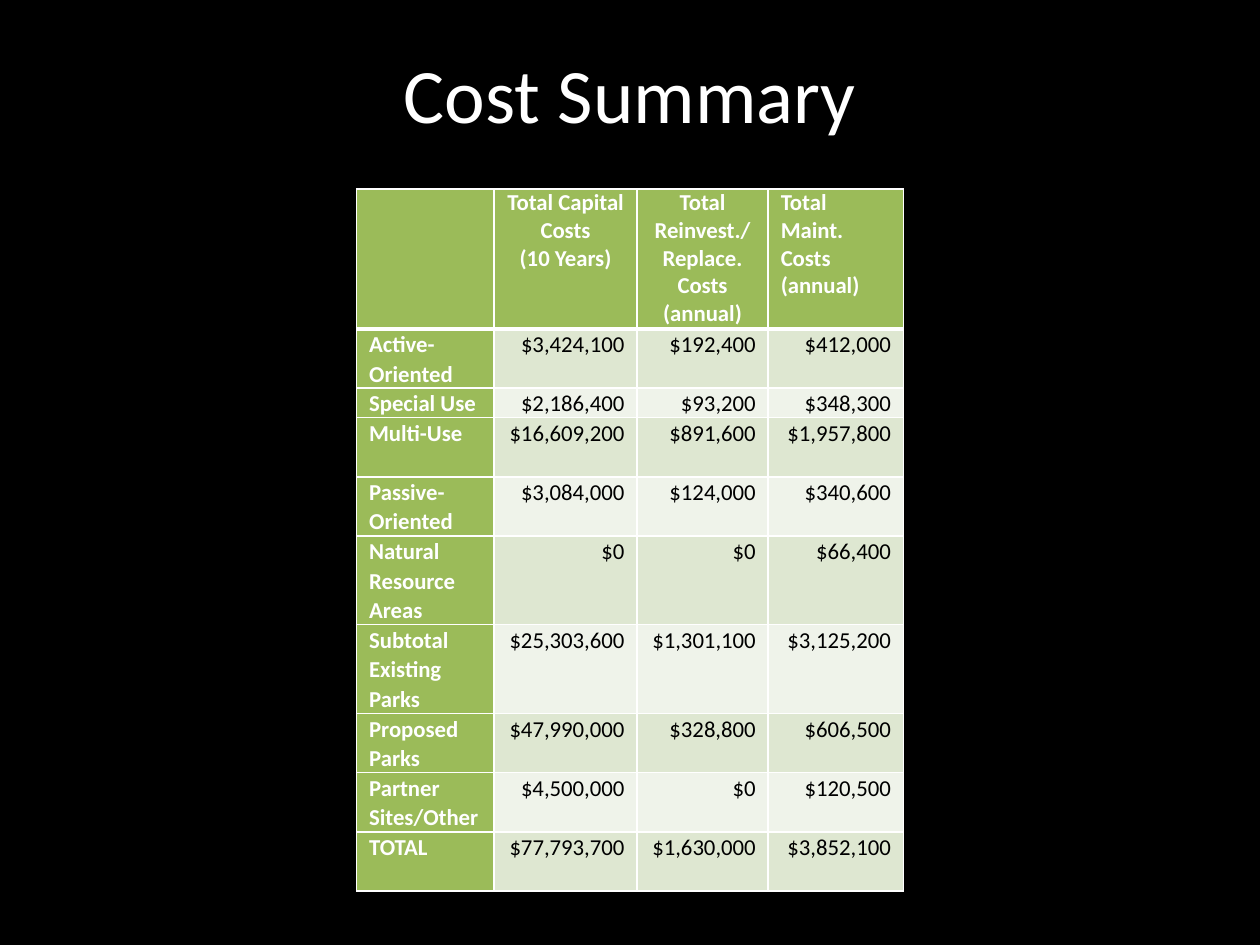
from lxml import etree
from pptx import Presentation, util as u
from pptx.dml.color import RGBColor
from pptx.enum import text
from pptx.oxml.ns import qn

COLORS = {"black": "000000", "white": "FFFFFF", "green": "9BBB59",
          "dark_band": "DEE7D1", "light_band": "EFF3EA"}
LEFT, CENTER, RIGHT = text.PP_ALIGN.LEFT, text.PP_ALIGN.CENTER, text.PP_ALIGN.RIGHT

COL_WIDTHS = [1.09, 1.13, 1.04, 1.07]
LINE_HEIGHT = 0.235
HEADER_HEIGHT = 1.11
HEADERS = [
    ("", LEFT),
    ("Total Capital Costs\n(10 Years)", CENTER),
    ("Total Reinvest./\nReplace.\nCosts (annual)", CENTER),
    ("Total Maint. Costs (annual)", LEFT),
]
# Number of text lines the row holds, then its cells
ROWS = [
    (2, "Active-Oriented", "$3,424,100", "$192,400", "$412,000"),
    (1, "Special Use", "$2,186,400", "$93,200", "$348,300"),
    (2, "Multi-Use", "$16,609,200", "$891,600", "$1,957,800"),
    (2, "Passive-Oriented", "$3,084,000", "$124,000", "$340,600"),
    (3, "Natural Resource Areas", "$0", "$0", "$66,400"),
    (3, "Subtotal Existing Parks", "$25,303,600", "$1,301,100", "$3,125,200"),
    (2, "Proposed Parks", "$47,990,000", "$328,800", "$606,500"),
    (2, "Partner Sites/Other", "$4,500,000", "$0", "$120,500"),
    (2, "TOTAL", "$77,793,700", "$1,630,000", "$3,852,100"),
]


def rgb(name):
    return RGBColor.from_string(COLORS[name])


def write(tf, content, color, align, spacing=None, **font):
    """Fill a text frame with one paragraph per line of content."""
    for i, line in enumerate(content.split("\n")):
        p = tf.paragraphs[0] if i == 0 else tf.add_paragraph()
        p.alignment = align
        if spacing:
            p.line_spacing = spacing
        p.font.size = font["size"]
        if not line:
            continue
        r = p.add_run()
        r.text = line
        for key, value in {"name": "Calibri", **font}.items():
            setattr(r.font, key, value)
        r.font.color.rgb = rgb(color)


def set_borders(cell, **widths):
    """Draw white borders, 1 pt unless a side is given its own width."""
    tc_pr = cell._tc.get_or_add_tcPr()
    for side in ("lnL", "lnR", "lnT", "lnB"):
        ln = etree.SubElement(tc_pr, qn("a:" + side), w=str(u.Pt(widths.get(side, 1))))
        fill = etree.SubElement(ln, qn("a:solidFill"))
        etree.SubElement(fill, qn("a:srgbClr"), val=COLORS["white"])


def style_cell(cell, fill, **widths):
    margins = {"margin_left": 0.1, "margin_right": 0.1, "margin_top": 0, "margin_bottom": 0}
    for key, value in margins.items():
        setattr(cell, key, u.Inches(value))
    set_borders(cell, **widths)
    cell.fill.solid()
    cell.fill.fore_color.rgb = rgb(fill)


def add_title(s, x, y, w, h):
    tf = s.shapes.add_textbox(*map(u.Inches, (x, y, w, h))).text_frame
    tf.word_wrap = True
    tf.vertical_anchor = text.MSO_ANCHOR.MIDDLE
    write(tf, "Cost Summary", "white", CENTER, size=u.Pt(44))


def add_cost_table(s, x, y, w, h):
    frame = s.shapes.add_table(len(ROWS) + 1, len(COL_WIDTHS), *map(u.Inches, (x, y, w, h)))
    table = frame.table
    for col, width in zip(table.columns, COL_WIDTHS):
        col.width = u.Inches(width * w / sum(COL_WIDTHS))

    # Header row
    table.rows[0].height = u.Inches(HEADER_HEIGHT)
    for c, (label, align) in enumerate(HEADERS):
        cell = table.cell(0, c)
        style_cell(cell, "green", lnB=3)
        write(cell.text_frame, label, "white", align, size=u.Pt(13), bold=True)

    # Body rows: green label column, banded amounts
    for i, (lines, *values) in enumerate(ROWS, start=1):
        table.rows[i].height = u.Inches(lines * LINE_HEIGHT)
        band = "dark_band" if i % 2 else "light_band"
        for c, value in enumerate(values):
            is_label = c == 0
            cell = table.cell(i, c)
            style_cell(cell, "green" if is_label else band, lnT=3 if i == 1 else 1)
            write(cell.text_frame, value, "white" if is_label else "black",
                  LEFT if is_label else RIGHT, 1.07, size=u.Pt(13), bold=is_label)


def main():
    prs = Presentation()
    prs.slide_width, prs.slide_height = u.Inches(10), u.Inches(7.5)
    s = prs.slides.add_slide(prs.slide_layouts[6])
    s.background.fill.solid()
    s.background.fill.fore_color.rgb = rgb("black")
    add_title(s, 0.5, 0.3, 9, 0.87)
    add_cost_table(s, 2.83, 1.5, 4.34, 5.52)
    prs.save("out.pptx")


if __name__ == "__main__":
    main()
